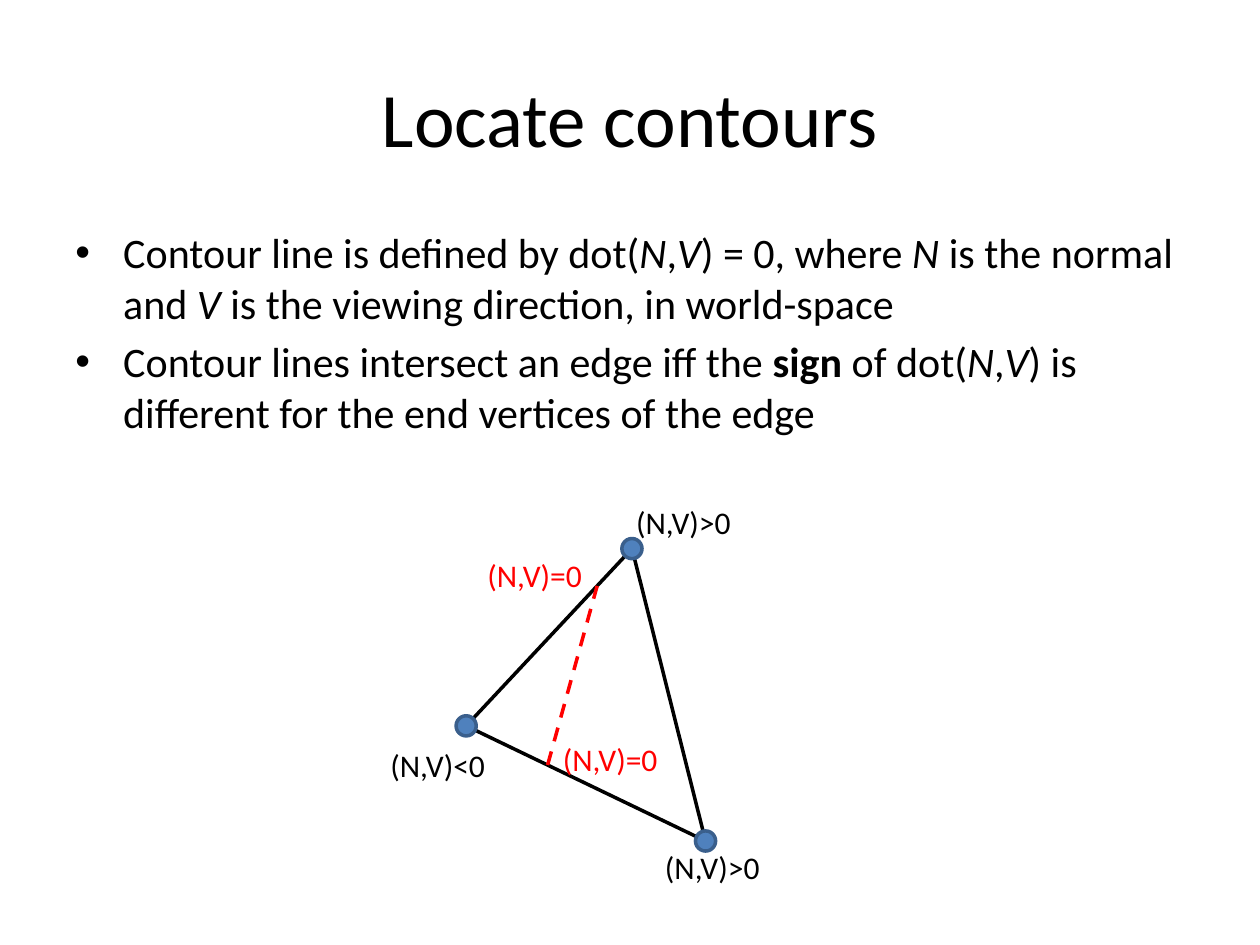
from pptx import Presentation
from pptx.dml.color import RGBColor
from pptx.enum.dml import MSO_LINE_DASH_STYLE as Dash
from pptx.enum.shapes import MSO_CONNECTOR, MSO_SHAPE
from pptx.enum.text import MSO_ANCHOR, MSO_AUTO_SIZE, PP_ALIGN
from pptx.oxml.ns import qn
from pptx.util import Inches, Pt
from lxml.etree import SubElement

FONT = "Calibri"
COLORS = {"text": "000000", "contour": "FF0000",
          "vertex": "4F81BD", "vertex_line": "3A5F8C"}

# Boxes as left, top, width, height in shares of the slide
TITLE_BOX = (0.05, 0.04, 0.9, 1 / 6)
BODY_BOX = (0.05, 0.7 / 3, 0.9, 0.66)
DIAGRAM_BOX = (0.3, 3.94 / 7.5, 0.314, 3.14 / 7.5)

# Each run is its text and its style: "", "i" or "b"
BULLETS = [
    [("Contour line is defined by dot(", ""), ("N", "i"), (",", ""),
     ("V", "i"), (") = 0, where ", ""), ("N", "i"),
     (" is the normal and ", ""), ("V", "i"),
     (" is the viewing direction, in world-space", "")],
    [("Contour lines intersect an edge iff the ", ""), ("sign", "b"),
     (" of dot(", ""), ("N", "i"), (",", ""), ("V", "i"),
     (") is different for the end vertices of the edge", "")],
]

# Positions in percent of the diagram box
VERTICES = {"left": (22.3, 58), "top": (64.2, 13.2), "right": (82.8, 87.1)}
EDGES = [("left", "top"), ("right", "top"), ("left", "right")]
CROSSINGS = [("left", "right", 0.34), ("left", "top", 0.79)]
LABELS = [
    ("(N,V)<0", 0, 61.5, "text"),
    ("(N,V)>0", 69.4, 87.3, "text"),
    ("(N,V)>0", 62.1, 0, "text"),
    ("(N,V)=0", 24.5, 13.4, "contour"),
    ("(N,V)=0", 43.6, 59.9, "contour"),
]
LABEL_SIZE = Inches(0.96), Inches(0.4)
VERTEX_SIZE = Inches(0.16)


def rgb(name):
    return RGBColor.from_string(COLORS[name])


def add_run(paragraph, text, size, color="text", style=""):
    run = paragraph.add_run()
    run.text = text
    run.font.name = FONT
    run.font.size = Pt(size)
    run.font.bold = style == "b"
    run.font.italic = style == "i"
    run.font.color.rgb = rgb(color)


def add_title(slide, box):
    frame = slide.shapes.add_textbox(*box).text_frame
    frame.word_wrap = True
    frame.vertical_anchor = MSO_ANCHOR.MIDDLE
    paragraph = frame.paragraphs[0]
    paragraph.alignment = PP_ALIGN.CENTER
    add_run(paragraph, "Locate contours", 44)


def add_bullet(paragraph):
    properties = paragraph._p.get_or_add_pPr()
    properties.set("marL", str(Inches(0.38)))
    properties.set("indent", str(-Inches(0.38)))
    SubElement(properties, qn("a:buFont"), typeface="Arial")
    SubElement(properties, qn("a:buChar"), char="•")


def add_body(slide, box):
    frame = slide.shapes.add_textbox(*box).text_frame
    frame.word_wrap = True
    for index, runs in enumerate(BULLETS):
        paragraph = frame.add_paragraph() if index else frame.paragraphs[0]
        paragraph.space_before = Pt(4.8)
        add_bullet(paragraph)
        for text, style in runs:
            add_run(paragraph, text, 24, style=style)


def add_line(shapes, start, end, color, dash=None):
    line = shapes.add_connector(MSO_CONNECTOR.STRAIGHT, *start, *end)
    line.line.color.rgb = rgb(color)
    line.line.width = Pt(2)
    if dash:
        line.line.dash_style = dash
    SubElement(line._element.spPr, qn("a:effectLst"))


def add_vertex(shapes, center):
    left, top = (value - VERTEX_SIZE // 2 for value in center)
    vertex = shapes.add_shape(MSO_SHAPE.OVAL, left, top, VERTEX_SIZE, VERTEX_SIZE)
    vertex.shadow.inherit = False
    vertex.fill.solid()
    vertex.fill.fore_color.rgb = rgb("vertex")
    vertex.line.color.rgb = rgb("vertex_line")
    vertex.line.width = Pt(2)


def add_label(shapes, position, text, color):
    frame = shapes.add_textbox(*position, *LABEL_SIZE).text_frame
    frame.word_wrap = False
    frame.auto_size = MSO_AUTO_SIZE.SHAPE_TO_FIT_TEXT
    add_run(frame.paragraphs[0], text, 18, color)


def add_triangle_diagram(slide, box):
    left, top, width, height = box
    shapes = slide.shapes.add_group_shape().shapes

    def place(x, y):
        return round(left + width * x / 100), round(top + height * y / 100)

    def crossing(start, end, share):
        """Point at the given share of the way along an edge."""
        return place(*(a + (b - a) * share
                       for a, b in zip(VERTICES[start], VERTICES[end])))

    for start, end in EDGES:
        add_line(shapes, place(*VERTICES[start]), place(*VERTICES[end]), "text")
    add_line(shapes, *(crossing(*item) for item in CROSSINGS), "contour", Dash.DASH)
    for text, x, y, color in LABELS:
        add_label(shapes, place(x, y), text, color)
    for vertex in VERTICES.values():
        add_vertex(shapes, place(*vertex))


def main():
    presentation = Presentation()
    presentation.slide_width = Inches(10)
    presentation.slide_height = Inches(7.5)
    slide = presentation.slides.add_slide(presentation.slide_layouts[6])
    sides = (presentation.slide_width, presentation.slide_height) * 2
    regions = [(add_title, TITLE_BOX), (add_body, BODY_BOX),
               (add_triangle_diagram, DIAGRAM_BOX)]
    for add_region, shares in regions:
        add_region(slide, [round(side * share) for side, share in zip(sides, shares)])
    presentation.save("out.pptx")


if __name__ == "__main__":
    main()
